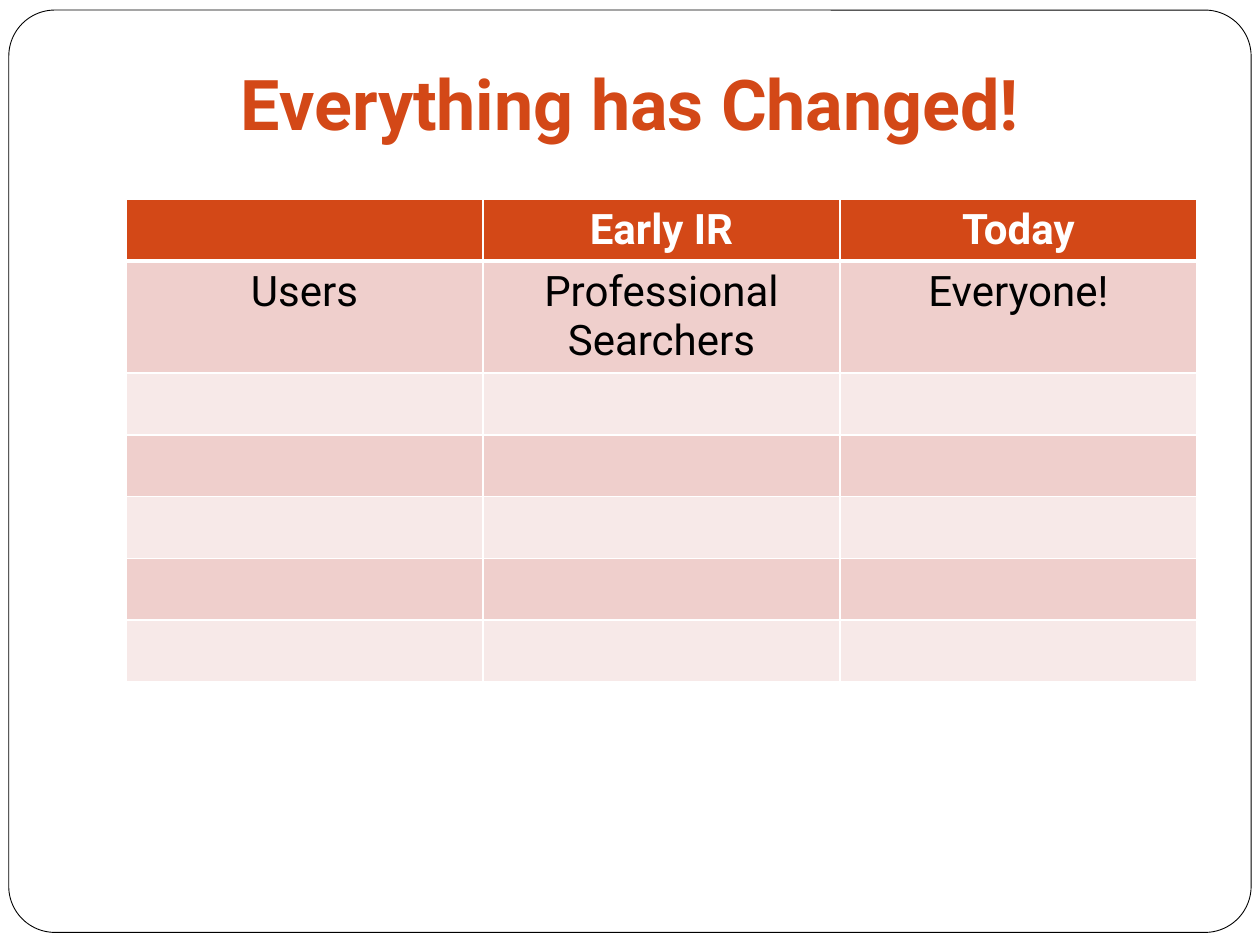
from pptx import Presentation
from pptx.dml.color import RGBColor
from pptx.enum.shapes import MSO_SHAPE
from pptx.enum.text import MSO_ANCHOR, PP_ALIGN
from pptx.oxml.ns import qn
from pptx.util import Inches, Pt
from lxml import etree

ROUND = MSO_SHAPE.ROUNDED_RECTANGLE
BOTTOM = MSO_ANCHOR.BOTTOM
CENTER = PP_ALIGN.CENTER

ORANGE = RGBColor(0xD3, 0x48, 0x17)
ROSE = RGBColor(0xEF, 0xCF, 0xCC)
PALE = RGBColor(0xF7, 0xE9, 0xE8)
WHITE = RGBColor(0xFF, 0xFF, 0xFF)
BLACK = RGBColor(0, 0, 0)
FONT = "Roboto"

ROWS = [
    ["", "Early IR", "Today"],
    ["Users", "Professional Searchers", "Everyone!"],
] + [[""] * 3 for _ in range(5)]
HEIGHTS = [0.49, 0.89] + [0.49] * 5


def write(frame, text, size=24, color=BLACK, bold=False):
    para = frame.paragraphs[0]
    para.alignment = CENTER
    if text:
        run = para.add_run()
        run.text = text
        font = run.font
        font.name, font.size, font.bold = FONT, Pt(size), bold
        font.color.rgb = color


def place(shape, box):
    shape.left, shape.top, shape.width, shape.height = map(Inches, box)


def add_frame(slide, box):
    panel = slide.shapes.add_shape(ROUND, *map(Inches, box))
    panel.adjustments[0] = 0.05
    panel.shadow.inherit = False
    panel.fill.solid()
    panel.fill.fore_color.rgb = WHITE
    panel.line.color.rgb = BLACK
    panel.line.width = Pt(0.5)
    # Send behind the title
    slide.shapes.element.insert(2, panel.element)


def add_title(slide, box, text):
    title = slide.shapes.title
    place(title, box)
    frame = title.text_frame
    frame.word_wrap = True
    frame.vertical_anchor = BOTTOM
    frame.margin_left = frame.margin_right = frame.margin_bottom = Inches(0.1)
    frame.margin_top = Inches(0.05)
    write(frame, text, size=40, color=ORANGE, bold=True)


def add_edges(cell, widths):
    props = cell._tc.get_or_add_tcPr()
    for side, width in zip("LRTB", widths):
        line = etree.SubElement(props, qn(f"a:ln{side}"), w=str(Pt(width)))
        fill = etree.SubElement(line, qn("a:solidFill"))
        etree.SubElement(fill, qn("a:srgbClr"), val=str(WHITE))


def add_grid(slide, box, rows, heights):
    shape = slide.shapes.add_table(len(rows), len(rows[0]), *map(Inches, box))
    table = shape.table
    for row, height in zip(table.rows, heights):
        row.height = Inches(height)
    for r, texts in enumerate(rows):
        head = r == 0
        shade = ORANGE if head else ROSE if r % 2 else PALE
        for c, text in enumerate(texts):
            cell = table.cell(r, c)
            # A thicker rule parts the header from the body
            add_edges(cell, (1, 1, 3 if r == 1 else 1, 3 if head else 1))
            cell.fill.solid()
            cell.fill.fore_color.rgb = shade
            write(cell.text_frame, text, color=WHITE if head else BLACK, bold=head)


def main():
    deck = Presentation()
    deck.slide_width, deck.slide_height = Inches(10), Inches(7.5)
    slide = deck.slides.add_slide(deck.slide_layouts[5])
    add_frame(slide, (0.07, 0.08, 9.86, 7.32))
    add_title(slide, (0.75, 0, 8.5, 1.25), "Everything has Changed!")
    add_grid(slide, (1, 1.58, 8.5, sum(HEIGHTS)), ROWS, HEIGHTS)
    deck.save("out.pptx")


if __name__ == "__main__":
    main()
